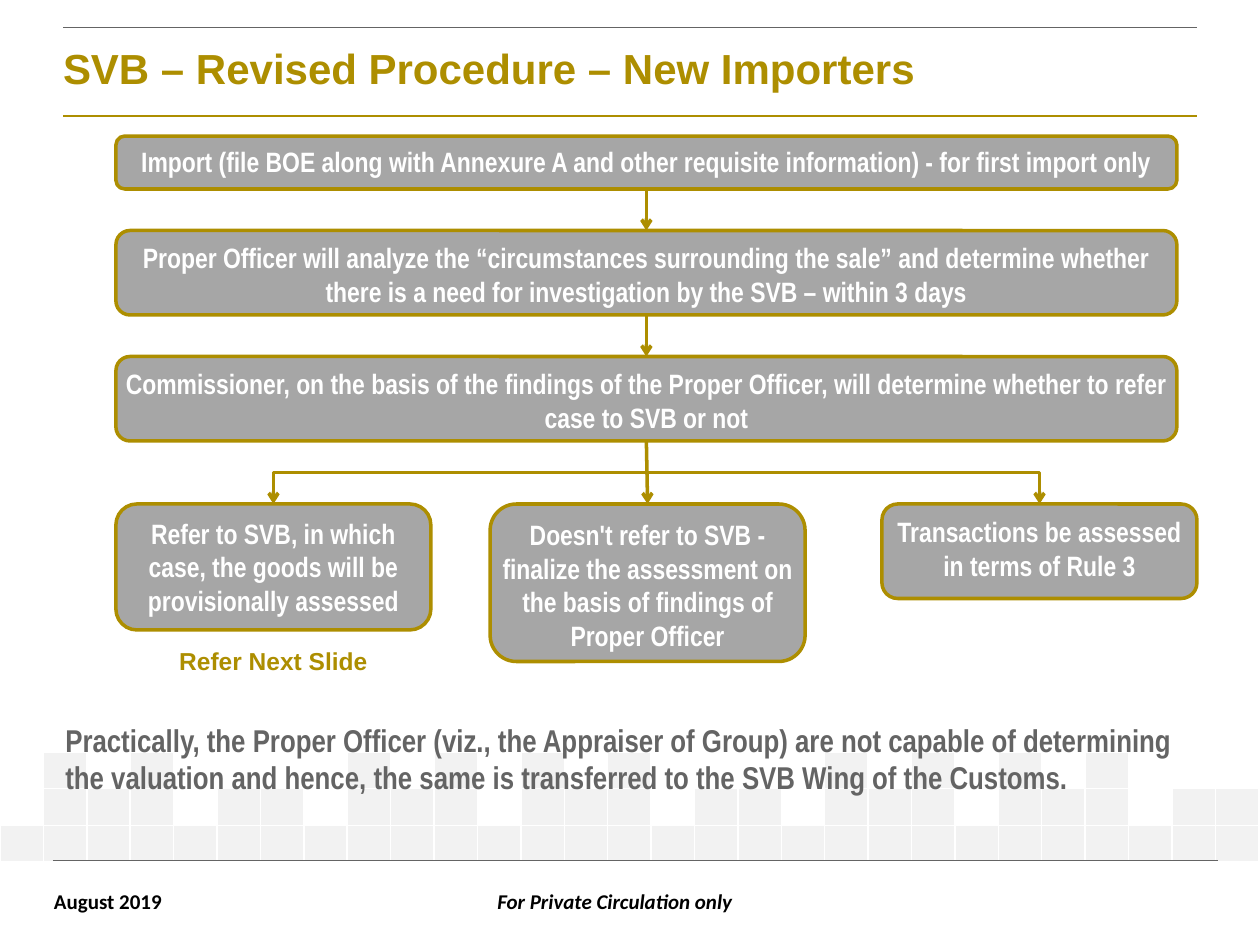
from lxml import etree
from pptx import Presentation
from pptx import util as u
from pptx.dml.color import RGBColor
from pptx.enum import shapes, text
from pptx.oxml.ns import qn

# Content
TITLE = "SVB – Revised Procedure – New Importers"
# Each box: left, top, width, height, words
STEPS = [
    (0.92, 1.08, 8.42, 0.42, "Import (file BOE along with Annexure A and other requisite "
     "information) - for first import only"),
    (0.92, 1.83, 8.42, 0.67, "Proper Officer will analyze the “circumstances surrounding the "
     "sale” and determine whether there is a need for investigation by the SVB – within 3 days"),
    (0.92, 2.83, 8.42, 0.67, "Commissioner, on the basis of the findings of the Proper Officer, "
     "will determine whether to refer case to SVB or not"),
]
ENDS = [
    (0.92, 4, 2.5, 1, "Refer to SVB, in which case, the goods will be provisionally assessed"),
    (3.89, 4, 2.5, 1.25, "Doesn't refer to SVB - finalize the assessment on the basis of "
     "findings of Proper Officer"),
    (7, 4, 2.5, 0.75, "Transactions be assessed in terms of Rule 3"),
]
NOTE = ("Practically, the Proper Officer (viz., the Appraiser of Group) are not capable of "
        "determining the valuation and hence, the same is transferred to the SVB Wing of the "
        "Customs.")
# Each label: left, top, width, height, words, style, centred, wrapped
LABELS = [
    (0.33, 7, 1.07, 0.3, "August 2019", "foot", False, False),
    (2.42, 7, 4.92, 0.3, "For Private Circulation only", "motto", True, True),
    (0.42, 5.67, 9.25, 0.71, NOTE, "note", False, True),
    (1.17, 5.08, 2, 0.34, "Refer Next Slide", "next", True, True),
]
# Each rule: left, right, height on slide, colour, weight
RULES = [
    (0.5, 9.5, 0.92, "gold", 1.5),
    (0.5, 9.5, 0.22, "gray", 0.5),
    (0.42, 9.67, 6.83, "gray", 0.25),
]
TILES = [
    ".#.#....#.#.#.#....#.#.#.#...",
    ".###.##.###.###.##.###.###.##",
    "#" * 29,
]

# Theme: colours, then type as font, size, colour, italic
THEME = {
    "gold": "AD8E00", "gray": "646464", "box": "A6A6A6",
    "tile": "F2F2F2", "white": "FFFFFF", "black": "000000",
    "type": {
        "title": ("Arial", 24, "gold", False),
        "step": ("Arial Narrow", 16, "white", False),
        "note": ("Arial Narrow", 18, "gray", False),
        "next": ("Arial", 14, "gold", False),
        "foot": ("Calibri", 12, "black", False),
        "motto": ("Calibri", 12, "black", True),
    },
}


def color(name):
    return RGBColor.from_string(THEME[name])


def place(*vals):
    return [u.Inches(v) for v in vals]


def write(frame, words, style, mid=False):
    frame.text = words
    para = frame.paragraphs[0]
    para.alignment = text.PP_ALIGN.CENTER if mid else text.PP_ALIGN.LEFT
    face, size, tone, slant = THEME["type"][style]
    font = para.font
    font.name, font.size = face, u.Pt(size)
    font.bold, font.italic = True, slant
    font.color.rgb = color(tone)
    return para


def inset(frame, left, top, right, bottom):
    frame.margin_left, frame.margin_top = place(left, top)
    frame.margin_right, frame.margin_bottom = place(right, bottom)


def tile(cell, mark):
    inset(cell, 0, 0, 0, 0)
    para = cell.text_frame.paragraphs[0]
    para._p.get_or_add_endParaRPr().set("sz", "800")
    props = cell._tc.get_or_add_tcPr()
    for side in ("lnL", "lnR", "lnT", "lnB"):
        edge = etree.SubElement(props, qn("a:" + side), w=str(u.Pt(1)))
        fill = etree.SubElement(edge, qn("a:solidFill"))
        etree.SubElement(fill, qn("a:srgbClr"), val=THEME["white"])
    if mark == "#":
        cell.fill.solid()
        cell.fill.fore_color.rgb = color("tile")
    else:
        cell.fill.background()


def add_box(slide, left, top, width, height, words):
    box = slide.shapes.add_shape(shapes.MSO_SHAPE.ROUNDED_RECTANGLE,
                                 *place(left, top, width, height))
    box.shadow.inherit = False
    box.fill.solid()
    box.fill.fore_color.rgb = color("box")
    box.line.color.rgb = color("gold")
    box.line.width = u.Pt(2)
    frame = box.text_frame
    frame.word_wrap = True
    frame.vertical_anchor = text.MSO_ANCHOR.TOP
    inset(frame, 0, 0.05, 0, 0.05)
    write(frame, words, "step", True)
    return box


def add_line(slide, ends, tone, weight, kind=shapes.MSO_CONNECTOR.STRAIGHT):
    line = slide.shapes.add_connector(kind, *ends)
    line.line.color.rgb = color(tone)
    line.line.width = u.Pt(weight)
    etree.SubElement(line._element.spPr, qn("a:effectLst"))
    return line


def link(slide, top, low, bent=False):
    kind = shapes.MSO_CONNECTOR.ELBOW if bent else shapes.MSO_CONNECTOR.STRAIGHT
    line = add_line(slide, (0, 0, 0, 0), "gold", 2, kind)
    line.begin_connect(top, 2)
    line.end_connect(low, 0)
    etree.SubElement(line.line._get_or_add_ln(), qn("a:tailEnd"), type="arrow")
    if bent:
        # Turn the elbow a quarter so that it leaves downwards
        x1, x2 = (b.left + b.width // 2 for b in (top, low))
        y1, y2 = top.top + top.height, low.top
        wide, high = y2 - y1, abs(x2 - x1)
        line.left, line.top = (x1 + x2 - wide) // 2, (y1 + y2 - high) // 2
        line.width, line.height = wide, high
        turn = line._element.spPr.xfrm
        turn.flipH = x2 > x1
        turn.rot = 270 if x2 > x1 else 90


def main():
    deck = Presentation()
    deck.slide_width, deck.slide_height = place(10, 7.5)
    slide = deck.slides.add_slide(deck.slide_layouts[5])

    # Tiled band
    rows, cols = len(TILES), len(TILES[0])
    grid = slide.shapes.add_table(rows, cols, *place(0, 5.97, 10, 0.87)).table
    grid.first_row = grid.horz_banding = False
    for r, marks in enumerate(TILES):
        for c, mark in enumerate(marks):
            tile(grid.cell(r, c), mark)

    # Rules
    for left, right, y, tone, weight in RULES:
        add_line(slide, place(left, y, right, y), tone, weight)

    # Title
    head = slide.shapes.title
    head.left, head.top, head.width, head.height = place(0.5, 0.22, 9, 0.66)
    head.text_frame.vertical_anchor = text.MSO_ANCHOR.MIDDLE
    inset(head.text_frame, 0, 0.04, 0, 0)
    write(head.text_frame, TITLE, "title").line_spacing = 0.85

    # Flow chart
    steps = [add_box(slide, *s) for s in STEPS]
    ends = [add_box(slide, *e) for e in ENDS]
    for top, low in zip(steps, steps[1:]):
        link(slide, top, low)
    for i, low in enumerate(ends):
        link(slide, steps[-1], low, bent=i != 1)

    # Labels
    for left, top, width, height, words, style, mid, wrap in LABELS:
        label = slide.shapes.add_textbox(*place(left, top, width, height))
        label.text_frame.word_wrap = wrap
        write(label.text_frame, words, style, mid)

    deck.save("out.pptx")


if __name__ == "__main__":
    main()
